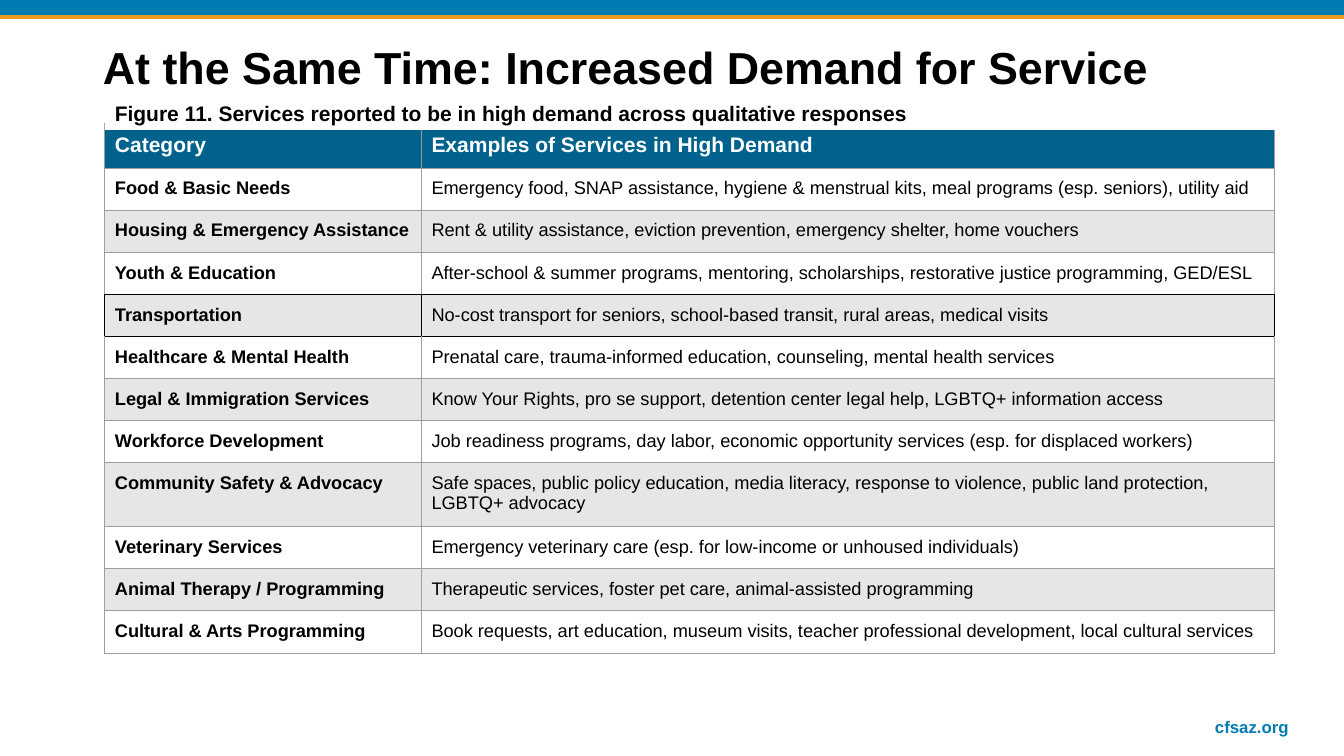
from pptx import Presentation
from pptx.dml.color import RGBColor
from pptx.enum.shapes import MSO_CONNECTOR, MSO_SHAPE
from pptx.enum.text import MSO_ANCHOR, PP_ALIGN
from pptx.oxml import parse_xml
from pptx.oxml.ns import nsdecls
from pptx.util import Inches, Pt

BLUE = RGBColor(0x00, 0x7C, 0xB3)
DARK_BLUE = RGBColor(0x00, 0x62, 0x8D)
ORANGE = RGBColor(0xE8, 0x9B, 0x1F)
BLACK = RGBColor(0x00, 0x00, 0x00)
WHITE = RGBColor(0xFF, 0xFF, 0xFF)
BAND_GREY = RGBColor(0xE6, 0xE6, 0xE6)
BORDER_GREY = RGBColor(0x9E, 0x9E, 0x9E)

SERVICES = [
    ("Category", "Examples of Services in High Demand"),
    ("Food & Basic Needs",
     "Emergency food, SNAP assistance, hygiene & menstrual kits, meal programs (esp. seniors), utility aid"),
    ("Housing & Emergency Assistance",
     "Rent & utility assistance, eviction prevention, emergency shelter, home vouchers"),
    ("Youth & Education",
     "After-school & summer programs, mentoring, scholarships, restorative justice programming, GED/ESL"),
    ("Transportation",
     "No-cost transport for seniors, school-based transit, rural areas, medical visits"),
    ("Healthcare & Mental Health",
     "Prenatal care, trauma-informed education, counseling, mental health services"),
    ("Legal & Immigration Services",
     "Know Your Rights, pro se support, detention center legal help, LGBTQ+ information access"),
    ("Workforce Development",
     "Job readiness programs, day labor, economic opportunity services (esp. for displaced workers)"),
    ("Community Safety & Advocacy",
     "Safe spaces, public policy education, media literacy, response to violence, "
     "public land protection, LGBTQ+ advocacy"),
    ("Veterinary Services",
     "Emergency veterinary care (esp. for low-income or unhoused individuals)"),
    ("Animal Therapy / Programming",
     "Therapeutic services, foster pet care, animal-assisted programming"),
    ("Cultural & Arts Programming",
     "Book requests, art education, museum visits, teacher professional development, local cultural services"),
]
OUTLINED_ROW = 4


def write_text(frame, text, size, color=BLACK, bold=True, align=PP_ALIGN.LEFT,
               anchor=MSO_ANCHOR.MIDDLE, margin=0.05, spacing=None):
    """Fill a text frame; margin is the top and bottom inset in inches."""
    frame.word_wrap = True
    frame.vertical_anchor = anchor
    frame.margin_left = frame.margin_right = Inches(0.1)
    frame.margin_top = frame.margin_bottom = Inches(margin)
    paragraph = frame.paragraphs[0]
    paragraph.alignment = align
    paragraph.line_spacing = spacing
    run = paragraph.add_run()
    run.text = text
    run.font.name = "Arial"
    run.font.size = Pt(size)
    run.font.bold = bold
    run.font.color.rgb = color


def set_border(cell, side, color):
    cell._tc.get_or_add_tcPr().append(parse_xml(
        f'<a:ln{side} {nsdecls("a")} w="{Pt(0.75)}"><a:solidFill>'
        f'<a:srgbClr val="{color}"/></a:solidFill></a:ln{side}>'))


prs = Presentation()
prs.slide_width, prs.slide_height = Inches(13.33), Inches(7.5)
slide = prs.slides.add_slide(prs.slide_layouts[5])
shapes = slide.shapes

# Top band
band = shapes.add_shape(MSO_SHAPE.RECTANGLE, 0, Inches(-0.02), prs.slide_width, Inches(0.2))
band.shadow.inherit = False
band.fill.solid()
band.fill.fore_color.rgb = BLUE
band.line.fill.background()

rule = shapes.add_connector(MSO_CONNECTOR.STRAIGHT, 0, Inches(0.17), prs.slide_width, Inches(0.17))
rule.line.color.rgb = ORANGE
rule.line.width = Pt(2.5)
rule._element.spPr.append(parse_xml(f'<a:effectLst {nsdecls("a")}/>'))

# Title and web address
title = shapes.title
title.left, title.top = Inches(0.92), Inches(-0.03)
title.width, title.height = Inches(11.5), Inches(1.45)
write_text(title.text_frame, "At the Same Time: Increased Demand for Service", 32, spacing=0.9)

website = shapes.add_textbox(Inches(9.88), Inches(6.96), Inches(3), Inches(0.4))
write_text(website.text_frame, "cfsaz.org", 12, color=BLUE, align=PP_ALIGN.RIGHT,
           anchor=MSO_ANCHOR.BOTTOM)

# Services table
services = shapes.add_table(len(SERVICES), 2, Inches(1.04), Inches(1.22),
                            Inches(11.6), Inches(5)).table
services.first_row = services.horz_banding = False
services.columns[0].width = Inches(3.14)
services.columns[1].width = Inches(8.46)

for row, texts in enumerate(SERVICES):
    header = row == 0
    for column, text in enumerate(texts):
        cell = services.cell(row, column)
        write_text(cell.text_frame, text, 15 if header else 13,
                   color=WHITE if header else BLACK, bold=header or column == 0)
        cell.vertical_anchor = MSO_ANCHOR.TOP
        cell.margin_left = cell.margin_right = Inches(0.1)
        cell.margin_top = cell.margin_bottom = Inches(0.1)
        # The outlined row shares its top and bottom edges with its neighbours
        black_sides = {OUTLINED_ROW - 1: "B", OUTLINED_ROW: "LRTB", OUTLINED_ROW + 1: "T"}.get(row, "")
        for side in "LRTB":
            set_border(cell, side, BLACK if side in black_sides else BORDER_GREY)
        if header or row % 2 == 0:
            cell.fill.solid()
            cell.fill.fore_color.rgb = DARK_BLUE if header else BAND_GREY
        else:
            cell.fill.background()

# Caption over the top edge of the table
caption = shapes.add_shape(MSO_SHAPE.RECTANGLE, Inches(1.04), Inches(0.96), Inches(11.61), Inches(0.33))
caption.shadow.inherit = False
caption.fill.solid()
caption.fill.fore_color.rgb = WHITE
caption.line.fill.background()
write_text(caption.text_frame,
           "Figure 11. Services reported to be in high demand across qualitative responses",
           15, margin=0.1)

prs.save("out.pptx")
